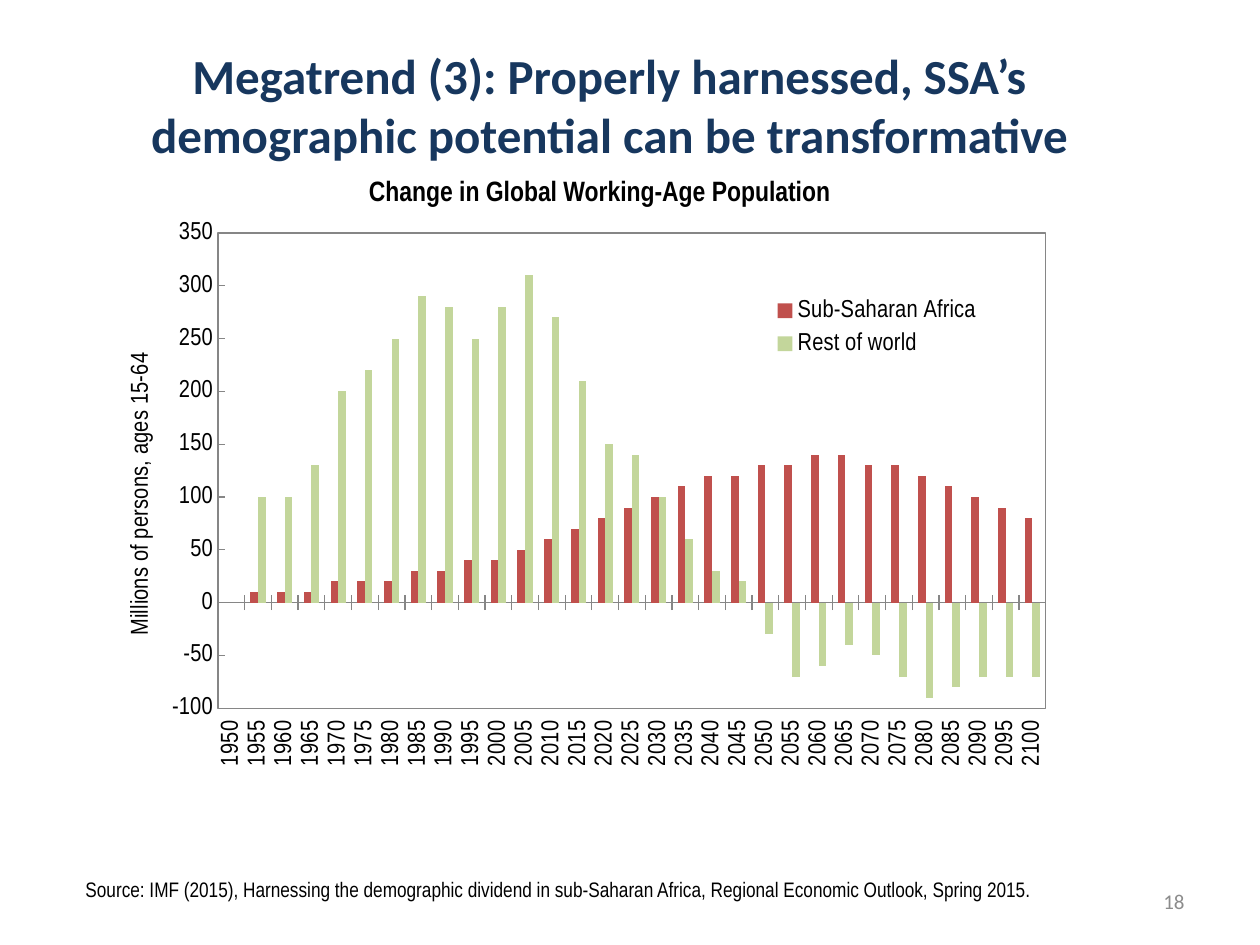
import lxml.etree
import pptx
import pptx.chart.data
import pptx.dml.color
import pptx.enum.chart
import pptx.enum.text
import pptx.oxml
import pptx.oxml.ns
import pptx.util
from pptx.util import Inches

CHART_WIDTH, CHART_HEIGHT = 7.58, 4.33
AXIS_GREY = "868686"
qn = pptx.oxml.ns.qn
color = pptx.dml.color.RGBColor.from_string
align = pptx.enum.text.PP_ALIGN
anchor = pptx.enum.text.MSO_ANCHOR


def write_text(shape, text, size, font_name, hex_color, bold=False,
               alignment=align.LEFT, vertical=anchor.TOP):
    frame = shape.text_frame
    frame.word_wrap = True
    frame.vertical_anchor = vertical
    frame.text = text
    paragraph = frame.paragraphs[0]
    paragraph.alignment = alignment
    font = paragraph.runs[0].font
    font.size = pptx.util.Pt(size)
    font.name = font_name
    font.bold = bold
    font.color.rgb = color(hex_color)


def place_in_chart(element, index, inches, target=None):
    """Place a chart part by left, top and optional width, height in inches."""
    for layout in element.findall(qn("c:layout")):
        element.remove(layout)
    layout = lxml.etree.Element(qn("c:layout"))
    manual = lxml.etree.SubElement(layout, qn("c:manualLayout"))
    values = [("layoutTarget", target)] if target else []
    values += [("xMode", "edge"), ("yMode", "edge")]
    totals = (CHART_WIDTH, CHART_HEIGHT, CHART_WIDTH, CHART_HEIGHT)
    values += [(tag, f"{length / total:.4f}")
               for tag, length, total in zip("xywh", inches, totals)]
    for tag, value in values:
        lxml.etree.SubElement(manual, qn("c:" + tag)).set("val", value)
    element.insert(index, layout)


presentation = pptx.Presentation()
presentation.slide_width = Inches(10)
presentation.slide_height = Inches(7.5)
slide = presentation.slides.add_slide(presentation.slide_layouts[6])

# Slide title, page number and chart heading
title = slide.shapes.add_textbox(Inches(0.42), Inches(0.12), Inches(8.83), Inches(1.42))
write_text(title, "Megatrend (3): Properly harnessed, SSA’s demographic potential can be transformative",
           28, "Calibri", "17375E", True, align.CENTER, anchor.MIDDLE)
page_number = slide.shapes.add_textbox(Inches(7.17), Inches(6.95), Inches(2.33), Inches(0.4))
write_text(page_number, "18", 12, "Calibri", "8C8C8C", False, align.RIGHT, anchor.MIDDLE)
heading = slide.shapes.add_textbox(Inches(2.83), Inches(1.33), Inches(4), Inches(0.67))
write_text(heading, "Change in Global Working-Age Population", 16, "Arial Narrow", "000000", True)

# Population chart
chart_data = pptx.chart.data.CategoryChartData()
chart_data.categories = [str(year) for year in range(1950, 2101, 5)]
chart_data.add_series("Sub-Saharan Africa", [
    None, 10, 10, 10, 20, 20, 20, 30, 30, 40, 40, 50, 60, 70, 80, 90, 100, 110, 120,
    120, 130, 130, 140, 140, 130, 130, 120, 110, 100, 90, 80])
chart_data.add_series("Rest of world", [
    None, 100, 100, 130, 200, 220, 250, 290, 280, 250, 280, 310, 270, 210, 150, 140, 100,
    60, 30, 20, -30, -70, -60, -40, -50, -70, -90, -80, -70, -70, -70])
chart = slide.shapes.add_chart(
    pptx.enum.chart.XL_CHART_TYPE.COLUMN_CLUSTERED, Inches(0.92), Inches(1.75),
    Inches(CHART_WIDTH), Inches(CHART_HEIGHT), chart_data).chart
chart.has_title = False
chart.font.size = pptx.util.Pt(14)
chart.font.name = "Arial Narrow"
chart.font.color.rgb = color("000000")

plot = chart.plots[0]
plot.vary_by_categories = False
plot.gap_width = 150
plot.overlap = 0
for series, fill in zip(plot.series, ("C0504D", "C3D69B")):
    series.invert_if_negative = False
    series.format.fill.solid()
    series.format.fill.fore_color.rgb = color(fill)

# Axes
tick_mark = pptx.enum.chart.XL_TICK_MARK
years, persons = chart.category_axis, chart.value_axis
for axis, mark in ((years, tick_mark.CROSS), (persons, tick_mark.INSIDE)):
    axis.has_major_gridlines = False
    axis.major_tick_mark = mark
    axis.minor_tick_mark = tick_mark.NONE
    axis.format.line.color.rgb = color(AXIS_GREY)
    axis.tick_labels.font.size = pptx.util.Pt(14)
years.tick_label_position = pptx.enum.chart.XL_TICK_LABEL_POSITION.LOW
label_body = years._element.find(qn("c:txPr")).find(qn("a:bodyPr"))
label_body.set("rot", "-5400000")
label_body.set("vert", "horz")
persons.minimum_scale, persons.maximum_scale, persons.major_unit = -100, 350, 50
persons.tick_labels.number_format = "0"
persons.tick_labels.number_format_is_linked = False

persons.axis_title.text_frame.text = "Millions of persons, ages 15-64"
title_font = persons.axis_title.text_frame.paragraphs[0].runs[0].font
title_font.size = pptx.util.Pt(14)
title_font.name = "Arial Narrow"
title_font.bold = False
title_font.color.rgb = color("000000")
place_in_chart(persons.axis_title._element, 1, (0.05, 1.02))

# Legend inside the framed plot area
chart.has_legend = True
chart.legend.position = pptx.enum.chart.XL_LEGEND_POSITION.RIGHT
chart.legend.include_in_layout = False
place_in_chart(chart.legend._element, 1, (5.14, 0.55, 1.8, 0.6))
plot_area = chart._chartSpace.chart.plotArea
place_in_chart(plot_area, 0, (0.81, 0.1, 6.57, 3.78), "inner")
plot_area.append(pptx.oxml.parse_xml(
    f'<c:spPr {pptx.oxml.ns.nsdecls("c", "a")}><a:noFill/><a:ln w="9525"><a:solidFill>'
    f'<a:srgbClr val="{AXIS_GREY}"/></a:solidFill></a:ln></c:spPr>'))

# Source line
source = slide.shapes.add_shape(pptx.enum.shapes.MSO_SHAPE.RECTANGLE,
                                Inches(0.58), Inches(6.91), Inches(7.75), Inches(0.34))
source.shadow.inherit = False
source.fill.solid()
source.fill.fore_color.rgb = color("FFFFFF")
source.line.fill.background()
write_text(source, "Source: IMF (2015), Harnessing the demographic dividend in sub-Saharan Africa, "
           "Regional Economic Outlook, Spring 2015.", 12, "Arial Narrow", "000000")

presentation.save("out.pptx")
